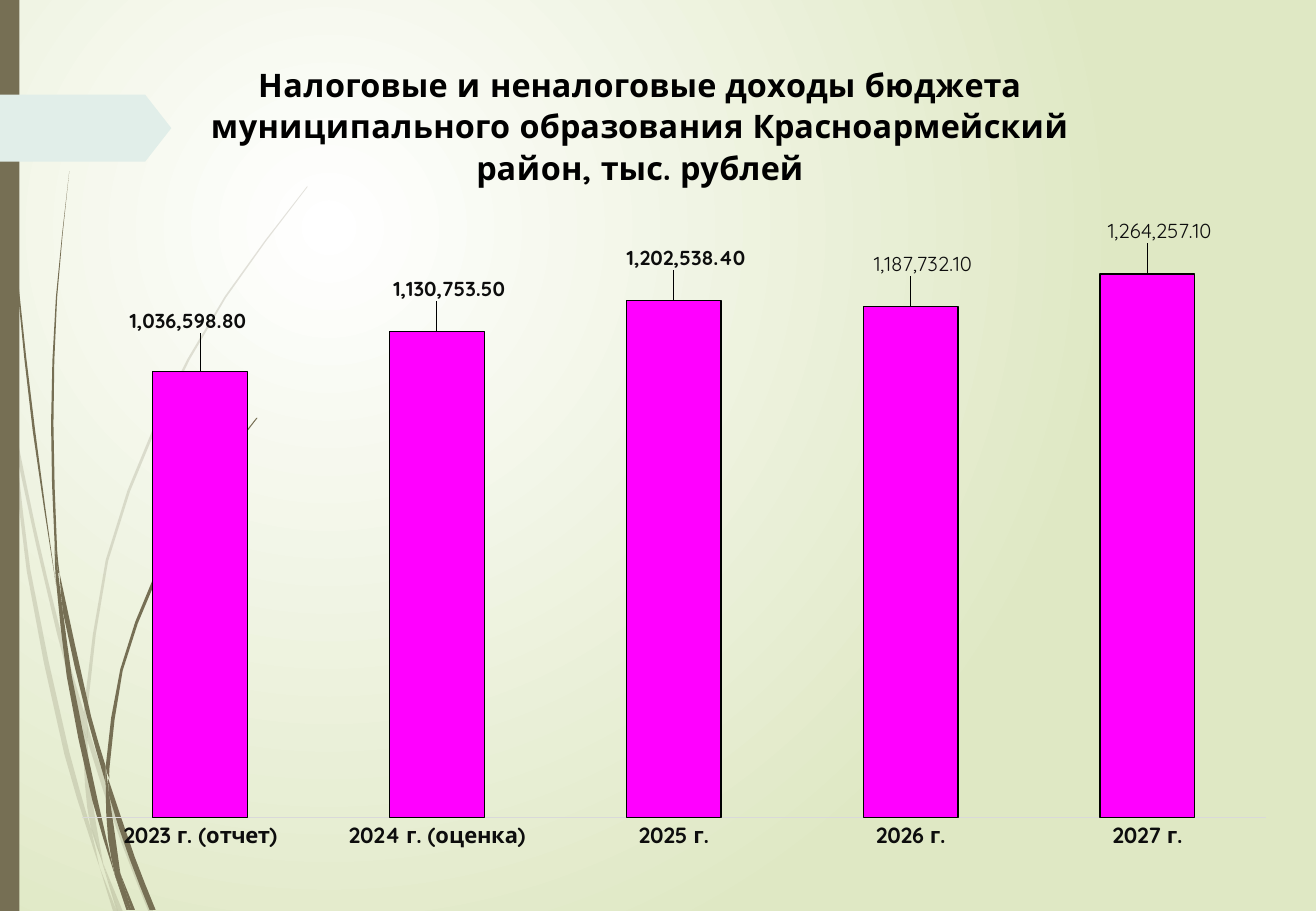
import math

import lxml.etree
import pptx
import pptx.chart.data
import pptx.dml.color
import pptx.enum.chart
import pptx.enum.shapes
import pptx.oxml.ns
import pptx.util
from pptx.util import Inches, Pt

WHITE = pptx.dml.color.RGBColor(0xFF, 0xFF, 0xFF)
BLACK = pptx.dml.color.RGBColor(0, 0, 0)
INK = pptx.dml.color.RGBColor(0x0D, 0x0D, 0x0D)
PALE_GREEN = pptx.dml.color.RGBColor(0xDF, 0xE8, 0xC4)
BROWN = pptx.dml.color.RGBColor(0x76, 0x6F, 0x54)
MINT = pptx.dml.color.RGBColor(0xE1, 0xEE, 0xE9)
MAGENTA = pptx.dml.color.RGBColor(0xFF, 0, 0xFF)
GREY = pptx.dml.color.RGBColor(0xD9, 0xD9, 0xD9)
FONT = "Quicksand"
NUMBER_FORMAT = "#,##0.00"
TITLE = ("Налоговые и неналоговые доходы бюджета муниципального образования "
         "Красноармейский район, тыс. рублей")
REVENUES = {
    "2023 г. (отчет)": 1036598.8,
    "2024 г. (оценка)": 1130753.5,
    "2025 г.": 1202538.4,
    "2026 г.": 1187732.1,
    "2027 г.": 1264257.1,
}
LABEL_OFFSETS = [(-0.01, -0.04), (0.01, -0.03), (0.01, -0.03), (0.01, -0.03), (0.01, -0.03)]
BOLD_LABELS = 3

FAINT_STRANDS = [
    ([(0.09, 3.5), (0.07, 3.22), (0, 2.82)], [(0.09, 3.5), (0.08, 3.44), (0, 2.99)]),
    ([(0.11, 3.45), (0.14, 3.76), (0.47, 5.22), (0.68, 5.99)],
     [(0.11, 3.45), (0.29, 4.33), (0.5, 5.2), (0.69, 5.86)]),
    ([(0.72, 5.96), (0.75, 6.07), (1.03, 6.92), (1.26, 7.5)],
     [(0.72, 5.96), (0.72, 6.1), (1, 6.94), (1.22, 7.5)]),
    ([(0.85, 7.11), (1.01, 7.5)], [(0.85, 7.11), (0.97, 7.5)]),
    ([(0.09, 3.5), (0.14, 3.76), (0.25, 4.69), (0.57, 6.19), (0.75, 6.83), (0.82, 7.14)],
     [(0.09, 3.5), (0.22, 4.7), (0.53, 6.21), (0.75, 6.93), (0.82, 7.14)]),
    ([(0.68, 5.99), (0.7, 6.46), (0.75, 6.83), (0.85, 7.11)],
     [(0.68, 5.99), (0.72, 6.1), (0.74, 6.46), (0.85, 7.11)]),
    ([(0.72, 5.96), (0.72, 5.84), (0.89, 4.62), (1.3, 3.49), (1.86, 2.45), (2.53, 1.54)],
     [(0.69, 5.86), (0.69, 5.84), (0.87, 4.61), (1.28, 3.48), (1.85, 2.44), (2.53, 1.53)]),
    ([(0.82, 7.14), (0.93, 7.5)], [(0.82, 7.14), (0.96, 7.5)]),
    ([(0.68, 5.99), (0.69, 5.86)], [(0.72, 6.1), (0.72, 5.96)]),
    ([(0.76, 6.83), (0.96, 7.5)], [(0.76, 6.83), (0.97, 7.5)]),
]
DARK_STRANDS = [
    ([(0.02, 0), (0.05, 1.1), (0.14, 2.33), (0.27, 3.55), (0.46, 4.81)],
     [(0.03, 0), (0.06, 1.09), (0.15, 2.32), (0.29, 3.55), (0.46, 4.81)]),
    ([(0.49, 4.72), (0.52, 5.05), (0.72, 5.92), (0.87, 6.45)],
     [(0.49, 4.72), (0.75, 5.9), (0.87, 6.31)]),
    ([(0.89, 6.41), (1.11, 7.06), (1.28, 7.49)],
     [(0.89, 6.41), (0.9, 6.56), (1.07, 7.08), (1.23, 7.49)]),
    ([(0.46, 4.77), (0.52, 5.05), (0.59, 5.56), (0.8, 6.57), (0.95, 7.22)],
     [(0.46, 4.77), (0.55, 5.57), (0.76, 6.59), (0.95, 7.22)]),
    ([(0.49, 4.72), (0.47, 4.53), (0.44, 3.49), (0.47, 2.45), (0.57, 1.41)],
     [(0.48, 4.72), (0.45, 4.49), (0.42, 3.49), (0.46, 2.45), (0.57, 1.41)]),
    ([(0.99, 7.19), (1.11, 7.49)], [(0.99, 7.19), (1.08, 7.49)]),
    ([(0.45, 4.49), (0.46, 4.77), (0.52, 5.05)], [(0.45, 4.49), (0.52, 5.05)]),
    ([(0.9, 6.41), (0.9, 6.33), (1.01, 5.52), (1.29, 4.76), (1.66, 4.06), (2.12, 3.44)],
     [(0.9, 6.41), (0.87, 6.31), (0.99, 5.51), (1.27, 4.74), (1.65, 4.05), (2.11, 3.44)]),
    ([(0.95, 7.22), (1.04, 7.49)], [(0.95, 7.22), (1.06, 7.49)]),
    ([(0.87, 6.45), (0.89, 6.91), (0.99, 7.19)], [(0.87, 6.45), (0.9, 6.56), (0.99, 7.19)]),
    ([(0.87, 6.31), (0.87, 6.45), (0.9, 6.56)], [(0.87, 6.31), (0.9, 6.56)]),
    ([(0.89, 6.91), (0.95, 7.22), (1.06, 7.49)], [(0.89, 6.91), (0.99, 7.19), (1.08, 7.49)]),
]


def add_element(parent, tag, **attributes):
    """Append a namespaced XML child and return it."""
    return lxml.etree.SubElement(parent, pptx.oxml.ns.qn(tag), **attributes)


def paint_background(slide):
    """Fill the background with a radial white to green gradient."""
    fill = slide.background.fill
    fill.gradient()
    for stop, position, color in zip(fill.gradient_stops, (0, 1), (WHITE, PALE_GREEN)):
        stop.position = position
        stop.color.rgb = color
    gradient = slide.element.find(".//" + pptx.oxml.ns.qn("a:gradFill"))
    gradient.remove(gradient.find(pptx.oxml.ns.qn("a:lin")))
    circle = add_element(gradient, "a:path", path="circle")
    add_element(circle, "a:fillToRect", l="50000", t="50000", r="100000", b="100000")


def smooth(anchors):
    """Return points of a smooth curve through the anchors."""
    last = len(anchors) - 1
    steps = 2 if last > 1 else 1
    lengths = [math.dist(a, b) for a, b in zip(anchors, anchors[1:])]
    slopes = []
    for index in range(last + 1):
        before, after = max(index - 1, 0), min(index + 1, last)
        span = sum(lengths[before:after])
        slopes.append([(b - a) / span for a, b in zip(anchors[before], anchors[after])])
    points = [anchors[0]]
    for index, length in enumerate(lengths):
        for step in range(1, steps + 1):
            t = step / steps
            points.append(tuple(
                (2 * t**3 - 3 * t**2 + 1) * anchors[index][axis]
                + (t**3 - 2 * t**2 + t) * length * slopes[index][axis]
                + (3 * t**2 - 2 * t**3) * anchors[index + 1][axis]
                + (t**3 - t**2) * length * slopes[index + 1][axis]
                for axis in (0, 1)))
    return points


def style_shape(shape, color):
    """Give a shape a plain fill without line or shadow."""
    shape.shadow.inherit = False
    shape.fill.solid()
    shape.fill.fore_color.rgb = color
    shape.line.fill.background()


def add_strands(slide, strands, opacity=100):
    """Draw a group of grass strands, each between two smooth edges."""
    group = slide.shapes.add_group_shape()
    for first_edge, second_edge in strands:
        outline = smooth(first_edge) + smooth(second_edge)[::-1]
        points = [(Inches(x), Inches(y)) for x, y in outline]
        builder = group.shapes.build_freeform(*points[0])
        builder.add_line_segments(points[1:], close=True)
        shape = builder.convert_to_shape()
        style_shape(shape, BROWN)
        if opacity < 100:
            color = shape.element.find(".//" + pptx.oxml.ns.qn("a:srgbClr"))
            add_element(color, "a:alpha", val=str(opacity * 1000))


def add_panel(slide, kind, left, top, width, height, color):
    """Add a preset shape in one colour and return it."""
    shape = slide.shapes.add_shape(kind, Inches(left), Inches(top), Inches(width), Inches(height))
    style_shape(shape, color)
    return shape


def set_font(font, size, color, bold=True):
    """Set face, size, colour and weight of a font."""
    font.name, font.size, font.bold = FONT, Pt(size), bold
    font.color.rgb = color


def place(parent, position, **settings):
    """Insert a manual layout into a chart element at the given child position."""
    old = parent.find(pptx.oxml.ns.qn("c:layout"))
    if old is not None:
        parent.remove(old)
    layout = add_element(parent, "c:layout")
    parent.insert(position, layout)
    manual = add_element(layout, "c:manualLayout")
    for name, value in settings.items():
        add_element(manual, "c:" + name, val=str(value))


def add_revenue_chart(slide):
    """Add the column chart of revenues by year."""
    data = pptx.chart.data.CategoryChartData(number_format=NUMBER_FORMAT)
    data.categories = list(REVENUES)
    data.add_series("Series 1", list(REVENUES.values()))
    frame = slide.shapes.add_chart(
        pptx.enum.chart.XL_CHART_TYPE.COLUMN_CLUSTERED,
        Inches(0.47), Inches(0.17), Inches(10.15), Inches(6.98), data)
    chart = frame.chart
    set_font(chart.font, 10, BLACK, False)
    chart.has_legend = False
    title_paragraph = chart.chart_title.text_frame.paragraphs[0]
    title_paragraph.text = TITLE
    set_font(title_paragraph.font, 19.2, BLACK)
    place(chart.chart_title._element, 1, xMode="edge", yMode="edge", x=0.12, y=0.04)

    chart.value_axis.minimum_scale, chart.value_axis.maximum_scale = 0, 1400000
    chart.value_axis.has_major_gridlines = False
    chart.value_axis.visible = False
    axis = chart.category_axis
    axis.major_tick_mark = pptx.enum.chart.XL_TICK_MARK.NONE
    axis.format.line.color.rgb = GREY
    axis.format.line.width = Pt(1)
    set_font(axis.tick_labels.font, 13, INK)

    plot = chart.plots[0]
    plot.gap_width = 150
    plot.vary_by_categories = False
    place(plot._element.getparent(), 0, layoutTarget="inner", xMode="edge", yMode="edge",
          x=0.02, y=0.23, w=0.96, h=0.71)
    series = plot.series[0]
    series.format.fill.solid()
    series.format.fill.fore_color.rgb = MAGENTA
    series.format.line.color.rgb = BLACK
    series.format.line.width = Pt(0.75)
    labels = series.data_labels
    labels.show_value = True
    labels.number_format, labels.number_format_is_linked = NUMBER_FORMAT, False
    set_font(labels.font, 12, INK)
    for index in range(len(REVENUES)):
        label = series.points[index].data_label
        set_font(label.font, 12, INK, index < BOLD_LABELS)
        label.position = pptx.enum.chart.XL_LABEL_POSITION.OUTSIDE_END
    for element, (x, y) in zip(series._element.iter(pptx.oxml.ns.qn("c:dLbl")), LABEL_OFFSETS):
        place(element, 1, x=x, y=y)


def main():
    """Build the slide and save it."""
    presentation = pptx.Presentation()
    presentation.slide_width, presentation.slide_height = Inches(10.83), Inches(7.5)
    slide = presentation.slides.add_slide(presentation.slide_layouts[6])
    paint_background(slide)
    add_strands(slide, FAINT_STRANDS, opacity=20)
    add_strands(slide, DARK_STRANDS)
    shapes = pptx.enum.shapes.MSO_SHAPE
    add_panel(slide, shapes.RECTANGLE, 0, 0, 0.16, 7.5, BROWN)
    arrow = add_panel(slide, shapes.PENTAGON, 0, 0.78, 1.41, 0.55, MINT)
    arrow.adjustments[0] = 0.39
    add_revenue_chart(slide)
    presentation.save("out.pptx")


if __name__ == "__main__":
    main()
